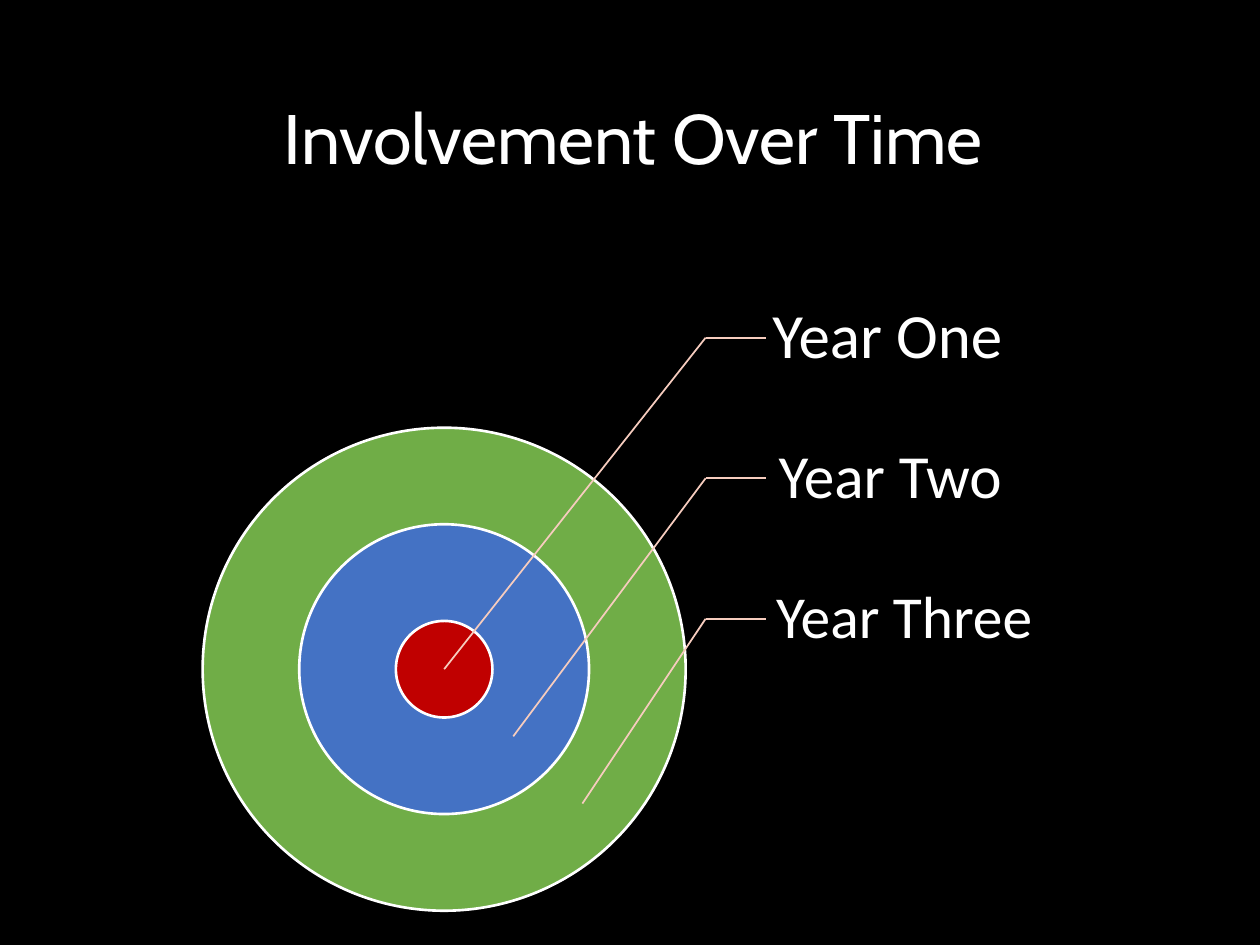
from dataclasses import dataclass

from lxml import etree
from pptx import Presentation
from pptx.dml.color import RGBColor
from pptx.enum.shapes import MSO_CONNECTOR, MSO_SHAPE
from pptx.enum.text import MSO_ANCHOR, PP_ALIGN
from pptx.oxml.ns import qn
from pptx.util import Pt

OVAL = MSO_SHAPE.OVAL
STRAIGHT = MSO_CONNECTOR.STRAIGHT
MIDDLE = MSO_ANCHOR.MIDDLE
LEFT, CENTER = PP_ALIGN.LEFT, PP_ALIGN.CENTER


@dataclass(frozen=True)
class Theme:
    background: str = "000000"
    text: str = "FFFFFF"
    outline: str = "FFFFFF"
    leader: str = "F6CCBE"
    rings: tuple = ("70AD47", "4472C4", "C00000")
    title_font: str = "Cabin"
    label_font: str = "Calibri"
    title_size: int = 40
    label_sizes: tuple = (36, 35, 34)


def rgb(value):
    return RGBColor.from_string(value)


def write_text(tf, text, *, font, size, color, align=LEFT):
    p = tf.paragraphs[0]
    p.alignment = align
    p.line_spacing = 0.9
    r = p.add_run()
    r.text = text
    r.font.name = font
    r.font.size = Pt(size)
    r.font.color.rgb = rgb(color)


class SlideBuilder:
    def __init__(self, slide, theme):
        self.s = slide
        self.theme = theme
        fill = slide.background.fill
        fill.solid()
        fill.fore_color.rgb = rgb(theme.background)

    def text(self, text, x, y, w, h, inset=7.2, **style):
        sp = self.s.shapes.add_textbox(Pt(x), Pt(y), Pt(w), Pt(h))
        tf = sp.text_frame
        tf.word_wrap = True
        tf.vertical_anchor = MIDDLE
        tf.margin_left = Pt(inset)
        tf.margin_right = tf.margin_top = tf.margin_bottom = Pt(3.6)
        write_text(tf, text, color=self.theme.text, **style)

    def circle(self, cx, cy, diameter, color):
        radius = diameter / 2
        sp = self.s.shapes.add_shape(
            OVAL, Pt(cx - radius), Pt(cy - radius), Pt(diameter), Pt(diameter))
        sp.shadow.inherit = False
        sp.fill.solid()
        sp.fill.fore_color.rgb = rgb(color)
        sp.line.color.rgb = rgb(self.theme.outline)
        sp.line.width = Pt(1.5)

    def line(self, x1, y1, x2, y2):
        sp = self.s.shapes.add_connector(STRAIGHT, Pt(x1), Pt(y1), Pt(x2), Pt(y2))
        sp.line.color.rgb = rgb(self.theme.leader)
        sp.line.width = Pt(1)
        etree.SubElement(sp._element.spPr, qn("a:effectLst"))


def main():
    theme = Theme()
    prs = Presentation()
    prs.slide_width, prs.slide_height = Pt(720), Pt(540)
    b = SlideBuilder(prs.slides.add_slide(prs.slide_layouts[6]), theme)

    b.text("Involvement Over Time", 49.7, 28.8, 620.6, 104.4,
           font=theme.title_font, size=theme.title_size, align=CENTER)

    cx, cy, core = 253.8, 382.4, 55.2
    for scale, color in zip((5, 3, 1), theme.rings):
        b.circle(cx, cy, core * scale, color)

    elbow_x, leader_end = 403.2, 437.8
    first_y, row_height = 193, 80.3
    labels = (("Year One", 421.2, 170.6, 20.2),
              ("Year Two", 425.5, 162.7, 19.4),
              ("Year Three", 424.8, 194.4, 18.7))
    for i, (label, x, w, inset) in enumerate(labels):
        y = first_y + i * row_height
        b.text(label, x, y - row_height / 2, w, row_height, inset,
               font=theme.label_font, size=theme.label_sizes[i])
        b.line(elbow_x, y, leader_end, y)
        b.line(elbow_x, y, cx + 39.5 * i, cy + 38.4 * i)

    prs.save("out.pptx")


if __name__ == "__main__":
    main()
